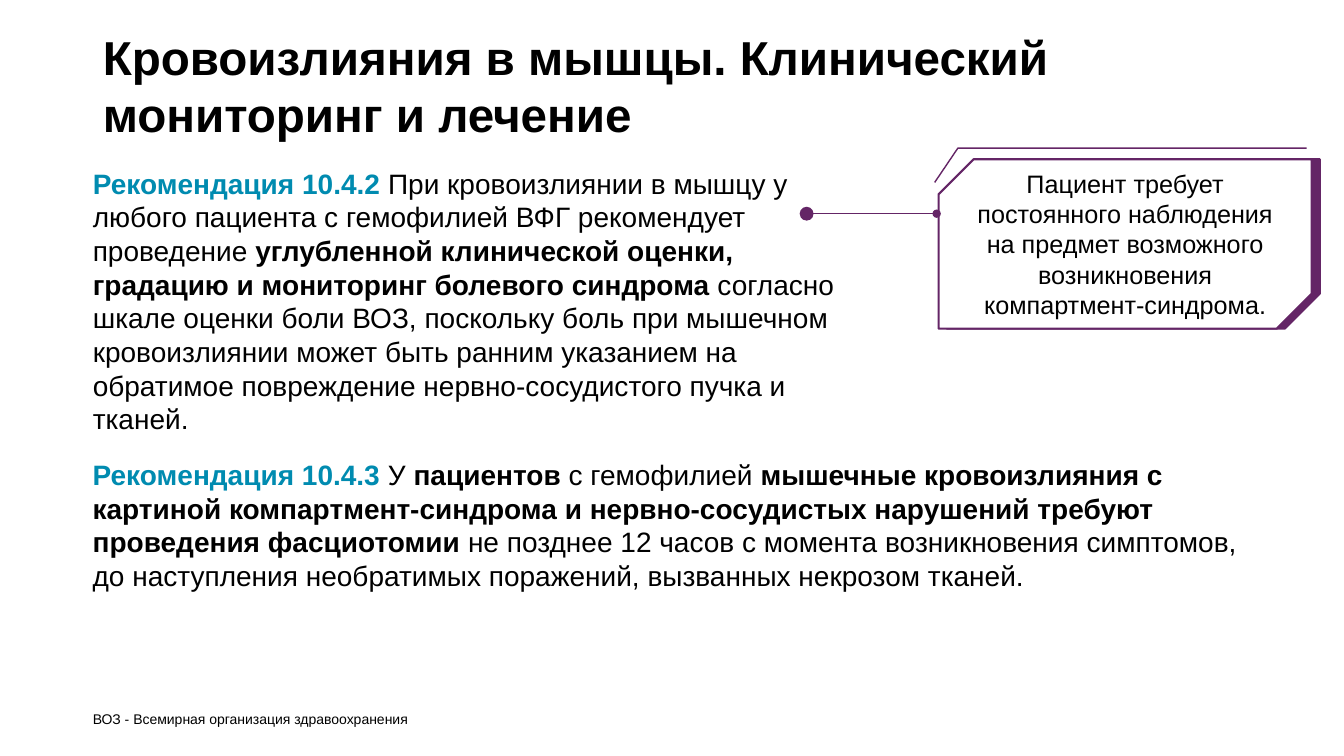
import pptx
import pptx.util
import pptx.dml.color
import pptx.enum.text
import pptx.enum.shapes
import pptx.oxml
import pptx.oxml.ns

Inches, Pt = pptx.util.Inches, pptx.util.Pt
Anchor = pptx.enum.text.MSO_ANCHOR
Align = pptx.enum.text.PP_ALIGN
Kinds = pptx.enum.shapes.MSO_SHAPE
qn = pptx.oxml.ns.qn
BLACK, TEAL, PURPLE, WHITE = "000000", "008BB0", "642566", "FFFFFF"


def rgb(value):
    return pptx.dml.color.RGBColor.from_string(value)


def write(shape, *runs, size, place=None, anchor=Anchor.TOP, align=Align.LEFT, bottom=0.05):
    """Fill a shape with one unbulleted paragraph of (text, bold, colour) runs."""
    if place:
        shape.left, shape.top, shape.width, shape.height = map(Inches, place)
    frame = shape.text_frame
    frame.word_wrap = True
    frame.auto_size = pptx.enum.text.MSO_AUTO_SIZE.NONE
    frame.vertical_anchor = anchor
    frame.margin_bottom = Inches(bottom)
    paragraph = frame.paragraphs[0]
    paragraph.alignment = align
    paragraph.space_before = Pt(0)
    properties = paragraph._p.get_or_add_pPr()
    properties.set("marL", "0")
    properties.set("indent", "0")
    pptx.oxml.ns  # namespace helpers are used below
    properties.append(properties.makeelement(qn("a:buNone"), {}))
    for text, bold, colour in runs:
        run = paragraph.add_run()
        run.text = text
        run.font.name = "Arial"
        run.font.size = Pt(size)
        run.font.bold = bold
        run.font.color.rgb = rgb(colour)


deck = pptx.Presentation()
deck.slide_width, deck.slide_height = Inches(13.33), Inches(7.5)
slide = deck.slides.add_slide(deck.slide_layouts[3])
title, assessment, footnote = slide.placeholders

# Title
write(title, ("Кровоизлияния в мышцы. Клинический мониторинг и лечение", True, BLACK),
      size=34, place=(0.92, 0.25, 11.5, 1.19), anchor=Anchor.MIDDLE)

# Recommendation 10.4.2
write(assessment,
      ("Рекомендация 10.4.2", True, TEAL),
      (" При кровоизлиянии в мышцу у любого пациента с гемофилией ВФГ рекомендует проведение ",
       False, BLACK),
      ("углубленной клинической оценки, градацию и мониторинг болевого синдрома", True, BLACK),
      (" согласно шкале оценки боли ВОЗ, поскольку боль при мышечном кровоизлиянии может быть "
       "ранним указанием на обратимое повреждение нервно-сосудистого пучка и тканей.",
       False, BLACK),
      size=20, place=(0.82, 1.6, 7.74, 2.79))

# Callout: purple backing plate, then the white card
for left, fill in ((9.39, PURPLE), (9.31, WHITE)):
    card = slide.shapes.add_shape(Kinds.SNIP_2_DIAG_RECTANGLE, Inches(left), Inches(1.58),
                                  Inches(3.7), Inches(1.68))
    card.adjustments[0], card.adjustments[1] = 0.206, 0
    card.shadow.inherit = False
    card.fill.solid()
    card.fill.fore_color.rgb = rgb(fill)
    card.line.color.rgb = rgb(PURPLE)
    card.line.width = Pt(1.5)
write(card, ("Пациент требует постоянного наблюдения на предмет возможного возникновения "
             "компартмент-синдрома.", False, BLACK),
      size=18, anchor=Anchor.MIDDLE, align=Align.CENTER)

# Callout leader with round ends, the larger one at the text
leader = slide.shapes.add_connector(pptx.enum.shapes.MSO_CONNECTOR.STRAIGHT,
                                    Inches(9.29), Inches(2.12), Inches(8), Inches(2.12))
leader.line.color.rgb = rgb(PURPLE)
leader.line.width = Pt(0.5)
stroke = leader.line._get_or_add_ln()
for end, scale in (("a:headEnd", "med"), ("a:tailEnd", "lg")):
    stroke.append(stroke.makeelement(qn(end), {"type": "oval", "w": scale, "len": scale}))
leader_properties = leader._element.spPr
leader_properties.append(leader_properties.makeelement(qn("a:effectLst"), {}))

# Callout accent line
outline = slide.shapes.build_freeform(Inches(9.27), Inches(1.81))
outline.add_line_segments([(Inches(9.5), Inches(1.47)), (Inches(12.96), Inches(1.47))],
                          close=False)
accent = outline.convert_to_shape()
accent.shadow.inherit = False
accent.fill.background()
accent.line.color.rgb = rgb(PURPLE)
accent.line.width = Pt(1)

# Footnote
write(footnote, ("ВОЗ - Всемирная организация здравоохранения", False, BLACK),
      size=10, place=(0.82, 6.82, 10.85, 0.4), anchor=Anchor.BOTTOM, bottom=0)

# Recommendation 10.4.3
fasciotomy = slide.shapes.add_textbox(0, 0, 0, 0)
write(fasciotomy,
      ("Рекомендация 10.4.3", True, TEAL),
      (" У ", False, BLACK),
      ("пациентов", True, BLACK),
      (" с гемофилией ", False, BLACK),
      ("мышечные кровоизлияния с картиной компартмент-синдрома и нервно-сосудистых нарушений "
       "требуют проведения фасциотомии", True, BLACK),
      (" не позднее 12 часов с момента возникновения симптомов, до наступления необратимых "
       "поражений, вызванных некрозом тканей.", False, BLACK),
      size=20, place=(0.82, 4.49, 11.88, 1.78))

deck.save("out.pptx")
